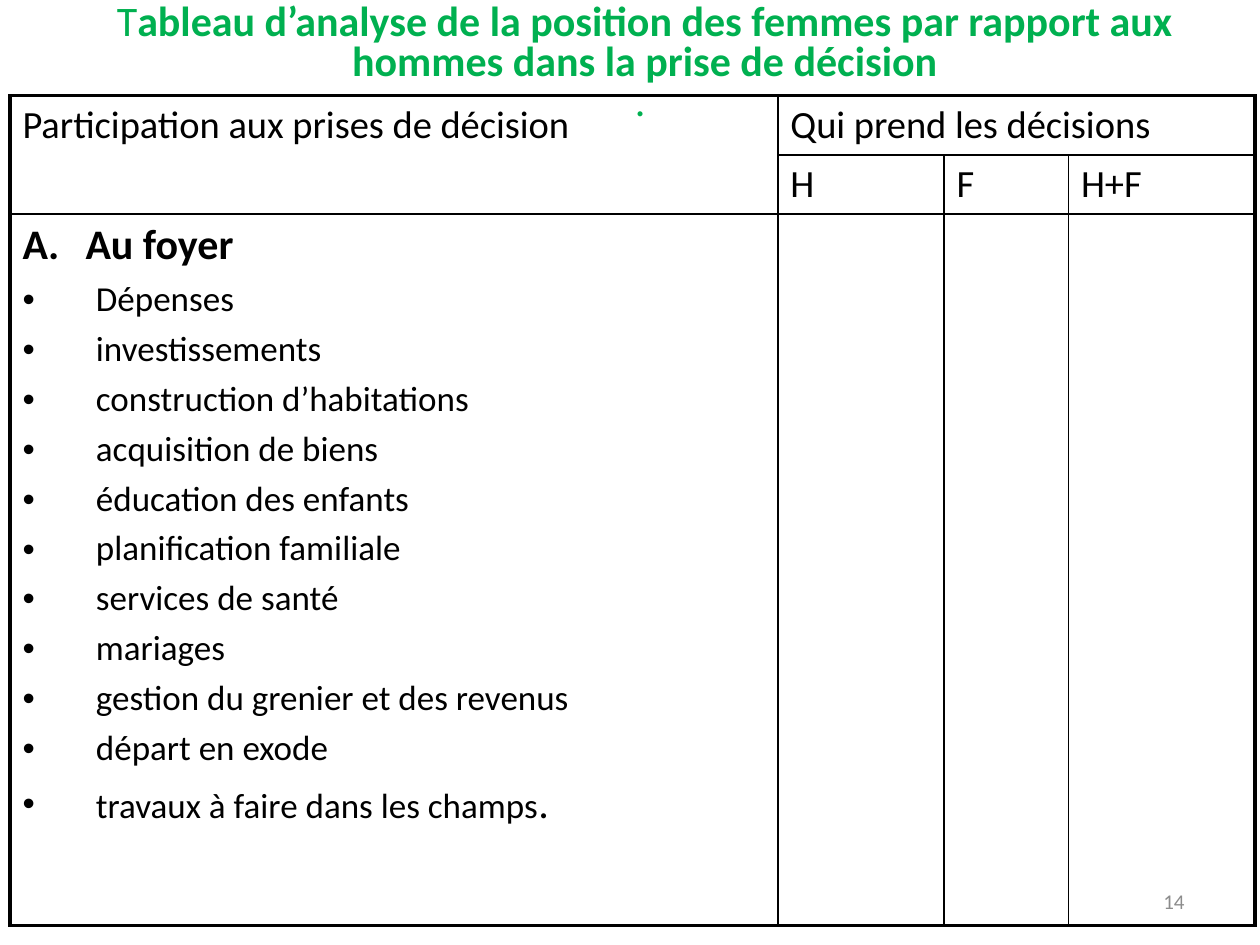
from lxml import etree
from pptx import Presentation
from pptx import util as u
from pptx.dml import color
from pptx.enum import text
from pptx.oxml import ns

GREEN = color.RGBColor(0x00, 0xB0, 0x50)
BLACK = color.RGBColor(0x00, 0x00, 0x00)
GREY = color.RGBColor(0x8C, 0x8C, 0x8C)
NO_STYLE = "{2D5ABB26-0587-4C30-8999-92F81FD0307C}"

COLUMNS = [15.48, 3.35, 2.51, 3.76]
ROWS = [1.19, 1.19, 14.35]
DECISIONS = [
    "Dépenses",
    "investissements",
    "construction d’habitations",
    "acquisition de biens",
    "éducation des enfants",
    "planification familiale",
    "services de santé",
    "mariages",
    "gestion du grenier et des revenus",
    "départ en exode",
]


class SlideBuilder:
    font = "Calibri"
    outer, inner = u.Pt(2.25), u.Pt(1)

    def __init__(self, page):
        self.page = page

    def style(self, font, size, colour=BLACK, bold=False):
        font.name, font.size, font.bold = self.font, u.Pt(size), bold
        font.color.rgb = colour

    def title(self, left, top, width, height, initial, rest, ending):
        box = self.page.shapes.title
        box.left, box.top, box.width, box.height = map(u.Cm, (left, top, width, height))
        frame = box.text_frame
        frame.auto_size = text.MSO_AUTO_SIZE.NONE
        frame.vertical_anchor = text.MSO_ANCHOR.TOP
        frame.margin_top = u.Cm(0.08)
        para = frame.paragraphs[0]
        para.alignment, para.line_spacing = text.PP_ALIGN.CENTER, 0.8
        self.style(para.font, 24, GREEN)
        para.add_run().text = initial
        span = para.add_run()
        span.text, span.font.bold = rest, True
        para.add_line_break()
        para.add_run().text = ending

    def page_number(self, left, top, width, height, number):
        box = self.page.shapes.add_textbox(*map(u.Cm, (left, top, width, height)))
        frame = box.text_frame
        frame.word_wrap = True
        frame.vertical_anchor = text.MSO_ANCHOR.MIDDLE
        para = frame.paragraphs[0]
        para.text, para.alignment = number, text.PP_ALIGN.RIGHT
        self.style(para.font, 12, GREY)

    def table(self, left, top, columns, rows):
        size = map(u.Cm, (left, top, sum(columns), sum(rows)))
        frame = self.page.shapes.add_table(len(rows), len(columns), *size)
        table = frame.table
        table.first_row = table.horz_banding = False
        frame._element.find(".//" + ns.qn("a:tableStyleId")).text = NO_STYLE
        for column, width in zip(table.columns, columns):
            column.width = u.Cm(width)
        for row, height in zip(table.rows, rows):
            row.height = u.Cm(height)
        return table

    def borders(self, table):
        last_row, last_column = len(table.rows), len(table.columns)
        for r in range(last_row):
            for c in range(last_column):
                cell = table.cell(r, c)
                if cell.is_spanned:
                    continue
                edges = {
                    "L": c == 0,
                    "R": c + cell.span_width == last_column,
                    "T": r == 0,
                    "B": r + cell.span_height == last_row,
                }
                props = cell._tc.get_or_add_tcPr()
                for side, is_outer in edges.items():
                    width = self.outer if is_outer else self.inner
                    line = etree.SubElement(props, ns.qn("a:ln" + side), w=str(int(width)))
                    fill = etree.SubElement(line, ns.qn("a:solidFill"))
                    etree.SubElement(fill, ns.qn("a:srgbClr"), val=str(BLACK))
                cell.fill.background()

    def heading(self, cell, words):
        para = cell.text_frame.paragraphs[0]
        para.text = words
        self.style(para.font, 22)

    def list_item(self, para, words, size, indent, bullet, bold=False):
        para.text = words
        self.style(para.font, size, bold=bold)
        props = para._p.get_or_add_pPr()
        props.set("marL", str(u.Cm(indent)))
        props.set("indent", str(-u.Cm(indent)))
        if bullet == "•":
            etree.SubElement(props, ns.qn("a:buFont"), typeface="Arial")
            etree.SubElement(props, ns.qn("a:buChar"), char=bullet)
        else:
            etree.SubElement(props, ns.qn("a:buFont"), typeface=self.font)
            etree.SubElement(props, ns.qn("a:buAutoNum"), type=bullet)

    def decision(self, frame, words, space=4):
        para = frame.add_paragraph()
        para.space_before = u.Pt(space)
        self.list_item(para, words, 20, 1.48, "•")
        return para


def main():
    deck = Presentation()
    deck.slide_width, deck.slide_height = u.Cm(25.4), u.Cm(19.05)
    slide = SlideBuilder(deck.slides.add_slide(deck.slide_layouts[5]))

    slide.page_number(18.2, 17.66, 5.93, 1.01, "14")
    slide.title(
        0.9, 0, 24.2, 1.78, "T",
        "ableau d’analyse de la position des femmes par rapport aux "
        "hommes dans la prise de décision",
        ". ",
    )

    table = slide.table(0.2, 1.93, COLUMNS, ROWS)
    table.cell(0, 0).merge(table.cell(1, 0))
    table.cell(0, 1).merge(table.cell(0, 3))
    slide.borders(table)
    slide.heading(table.cell(0, 0), "Participation aux prises de décision")
    slide.heading(table.cell(0, 1), "Qui prend les décisions")
    for column, who in enumerate(["H", "F", "H+F"], start=1):
        slide.heading(table.cell(1, column), who)

    frame = table.cell(2, 0).text_frame
    slide.list_item(frame.paragraphs[0], "Au foyer", 24, 1.27, "alphaUcPeriod", bold=True)
    for words in DECISIONS:
        slide.decision(frame, words)
    span = slide.decision(frame, "travaux à faire dans les champs", 4.8).add_run()
    span.text, span.font.size = ".", u.Pt(24)

    deck.save("out.pptx")


if __name__ == "__main__":
    main()
